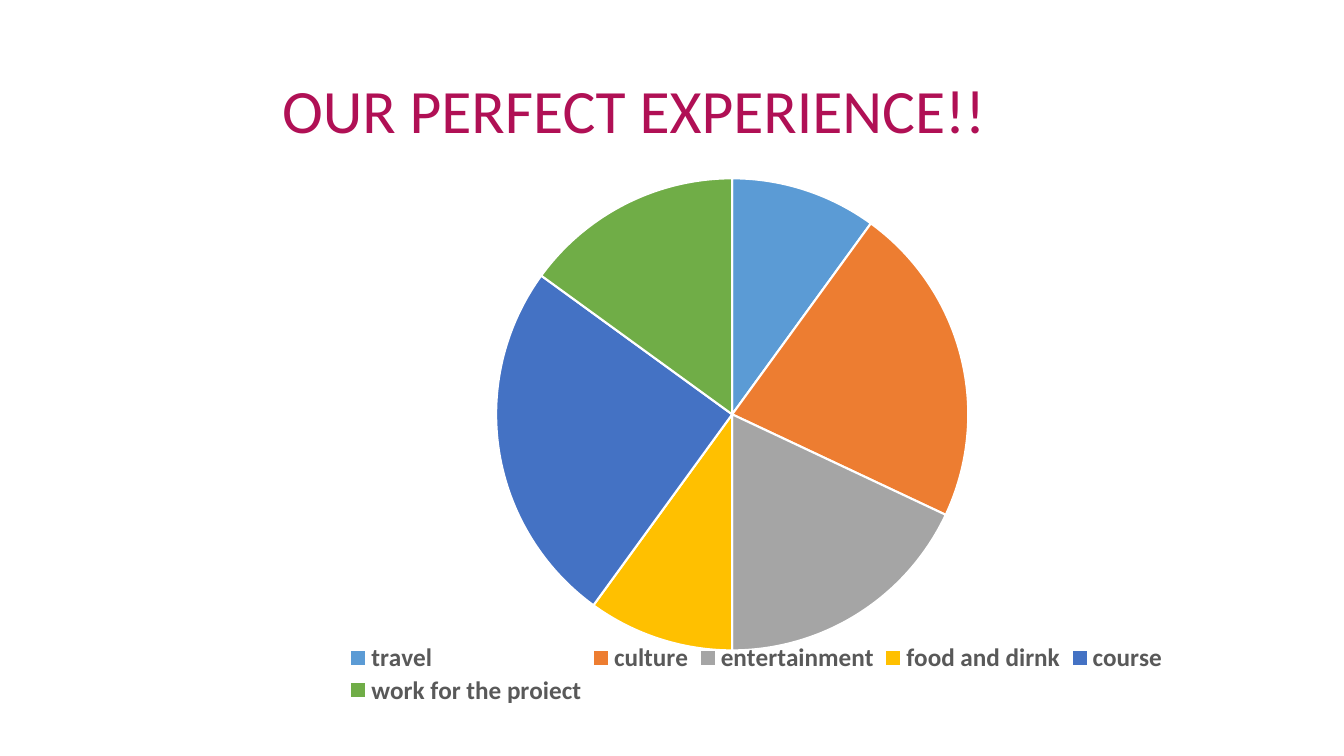
from pptx import Presentation
from pptx.chart.data import CategoryChartData
from pptx.dml.color import RGBColor
from pptx.enum.chart import XL_CHART_TYPE as ChartType, XL_LEGEND_POSITION as LegendPos
from pptx.enum.text import MSO_ANCHOR as Anchor
from pptx.oxml.ns import qn
from pptx.util import Pt
from lxml.etree import SubElement

FONT = "Calibri"
EXPERIENCE = [
    ("travel", 10, "5B9BD5"),
    ("culture", 22, "ED7D31"),
    ("entertainment", 18, "A5A5A5"),
    ("food and dirnk", 10, "FFC000"),
    ("course", 25, "4472C4"),
    ("work for the proiect", 15, "70AD47"),
]


def color(value):
    return RGBColor.from_string(value)


def style_font(font, size, value, bold=False):
    font.name, font.size, font.bold = FONT, Pt(size), bold
    font.color.rgb = color(value)


def place(element, index, x, y, w, h, inner=False):
    """Position a chart part by fractions of the chart area."""
    for old_layout in element.findall(qn("c:layout")):
        element.remove(old_layout)
    layout = SubElement(element, qn("c:layout"))
    element.insert(index, layout)
    manual = SubElement(layout, qn("c:manualLayout"))
    settings = [("layoutTarget", "inner")] if inner else []
    settings += [("xMode", "edge"), ("yMode", "edge"),
                 ("x", x), ("y", y), ("w", w), ("h", h)]
    for tag, setting in settings:
        SubElement(manual, qn("c:" + tag)).set("val", str(setting))


def add_title(slide, text):
    frame = slide.shapes.add_textbox(Pt(66), Pt(28.8), Pt(828), Pt(104.4)).text_frame
    frame.word_wrap = True
    frame.vertical_anchor = Anchor.MIDDLE
    frame.margin_left = Pt(135.5)
    heading = frame.paragraphs[0]
    heading.line_spacing = 0.9
    run = heading.add_run()
    run.text = text
    style_font(run.font, 44, "B01055")


def add_pie(slide, shares):
    data = CategoryChartData()
    data.categories = [name for name, _, _ in shares]
    data.add_series("Series 1", [share for _, share, _ in shares])
    pie = slide.shapes.add_chart(
        ChartType.PIE, Pt(95), Pt(114.5), Pt(864.7), Pt(394.6), data).chart
    pie.has_title = False
    style_font(pie.font, 10, "000000")

    # Slices
    plot = pie.plots[0]
    plot.vary_by_categories = True
    for index, (_, _, fill) in enumerate(shares):
        slice_format = plot.series[0].points[index].format
        slice_format.fill.solid()
        slice_format.fill.fore_color.rgb = color(fill)
        slice_format.line.color.rgb = color("FFFFFF")
        slice_format.line.width = Pt(1.5)

    # Legend
    pie.has_legend = True
    legend = pie.legend
    legend.position = LegendPos.BOTTOM
    legend.include_in_layout = False
    style_font(legend.font, 18, "595959", bold=True)

    # Placement inside the chart area
    plot_area = pie.element.find(".//" + qn("c:plotArea"))
    legend_element = pie.element.find(".//" + qn("c:legend"))
    place(plot_area, 0, 0.3, 0.03, 0.39, 0.86, inner=True)
    place(legend_element, 1, 0.17, 0.87, 0.69, 0.12)


def main():
    deck = Presentation()
    deck.slide_width, deck.slide_height = Pt(960), Pt(540)
    slide = deck.slides.add_slide(deck.slide_layouts[6])
    add_title(slide, "OUR PERFECT EXPERIENCE!!")
    add_pie(slide, EXPERIENCE)
    deck.save("out.pptx")


if __name__ == "__main__":
    main()
